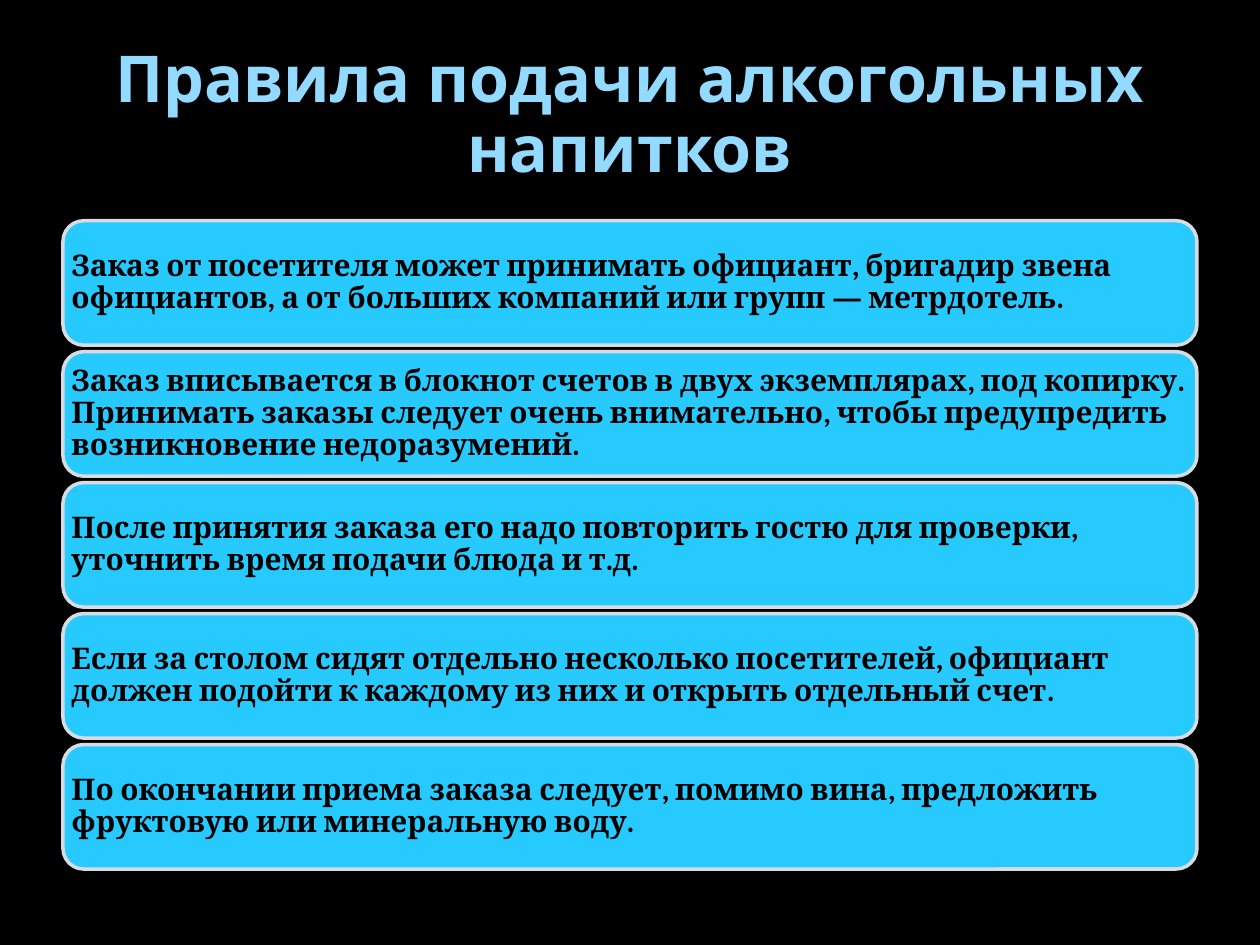
from pptx import Presentation
from pptx.dml.color import RGBColor
from pptx.enum.shapes import MSO_SHAPE
from pptx.enum.text import MSO_ANCHOR, PP_ALIGN
from pptx.util import Cm, Pt

ROUNDED = MSO_SHAPE.ROUNDED_RECTANGLE
MIDDLE = MSO_ANCHOR.MIDDLE
LEFT, CENTER = PP_ALIGN.LEFT, PP_ALIGN.CENTER

TITLE = "Правила подачи алкогольных напитков"
RULES = [
    "Заказ от посетителя может принимать официант, бригадир звена официантов, "
    "а от больших компаний или групп — метрдотель.",
    "Заказ вписывается в блокнот счетов в двух экземплярах, под копирку. "
    "Принимать заказы следует очень внимательно, чтобы предупредить "
    "возникновение недоразумений.",
    "После принятия заказа его надо повторить гостю для проверки, "
    "уточнить время подачи блюда и т.д.",
    "Если за столом сидят отдельно несколько посетителей, официант должен "
    "подойти к каждому из них и открыть отдельный счет.",
    "По окончании приема заказа следует, помимо вина, предложить фруктовую "
    "или минеральную воду.",
]

TITLE_FONT = {"name": "Noto Sans", "size": Pt(36.9), "bold": True}
RULE_FONT = {"name": "Cambria", "size": Pt(17), "bold": True}
TITLE_FRAME = {"word_wrap": True, "vertical_anchor": MIDDLE}
RULE_FRAME = {
    "word_wrap": True,
    "vertical_anchor": MIDDLE,
    "margin_left": Cm(0.05),
    "margin_right": Cm(0.05),
    "margin_top": Cm(0.05),
    "margin_bottom": Cm(0.05),
}


def color(value):
    """Return the colour for a hex string."""
    return RGBColor.from_string(value)


def apply(target, values):
    """Set each named attribute on the target."""
    for name, value in values.items():
        setattr(target, name, value)


def write(frame, text, frame_format, font_format, ink, alignment):
    """Fill a text frame with one formatted paragraph."""
    apply(frame, frame_format)
    paragraph = frame.paragraphs[0]
    apply(paragraph, {"alignment": alignment, "line_spacing": 0.9})
    paragraph.text = text
    apply(paragraph.font, font_format)
    paragraph.font.color.rgb = color(ink)


def add_heading(slide, left, top, width, height):
    """Place the slide title in the given box."""
    heading = slide.shapes.add_textbox(Cm(left), Cm(top), Cm(width), Cm(height))
    write(heading.text_frame, TITLE, TITLE_FRAME, TITLE_FONT, "92DAFF", CENTER)


def add_rules(slide, left, top, width, height, gap=0.13):
    """Stack the rules as equal panels within the given box."""
    panel_height = (height - gap * (len(RULES) - 1)) / len(RULES)
    for index, rule in enumerate(RULES):
        panel_top = top + index * (panel_height + gap)
        panel = slide.shapes.add_shape(
            ROUNDED, Cm(left), Cm(panel_top), Cm(width), Cm(panel_height)
        )
        panel.shadow.inherit = False
        panel.fill.solid()
        panel.fill.fore_color.rgb = color("26CAFE")
        panel.line.color.rgb = color("D8DBE2")
        panel.line.width = Pt(2)
        write(panel.text_frame, rule, RULE_FRAME, RULE_FONT, "000000", LEFT)


def main():
    """Build and save the slide."""
    deck = Presentation()
    apply(deck, {"slide_width": Cm(25.4), "slide_height": Cm(19.05)})
    slide = deck.slides.add_slide(deck.slide_layouts[6])
    slide.background.fill.solid()
    slide.background.fill.fore_color.rgb = color("000000")
    add_heading(slide, 1.27, 0.76, 22.86, 3.18)
    add_rules(slide, 1.27, 4.45, 22.86, 13.07)
    deck.save("out.pptx")


if __name__ == "__main__":
    main()
